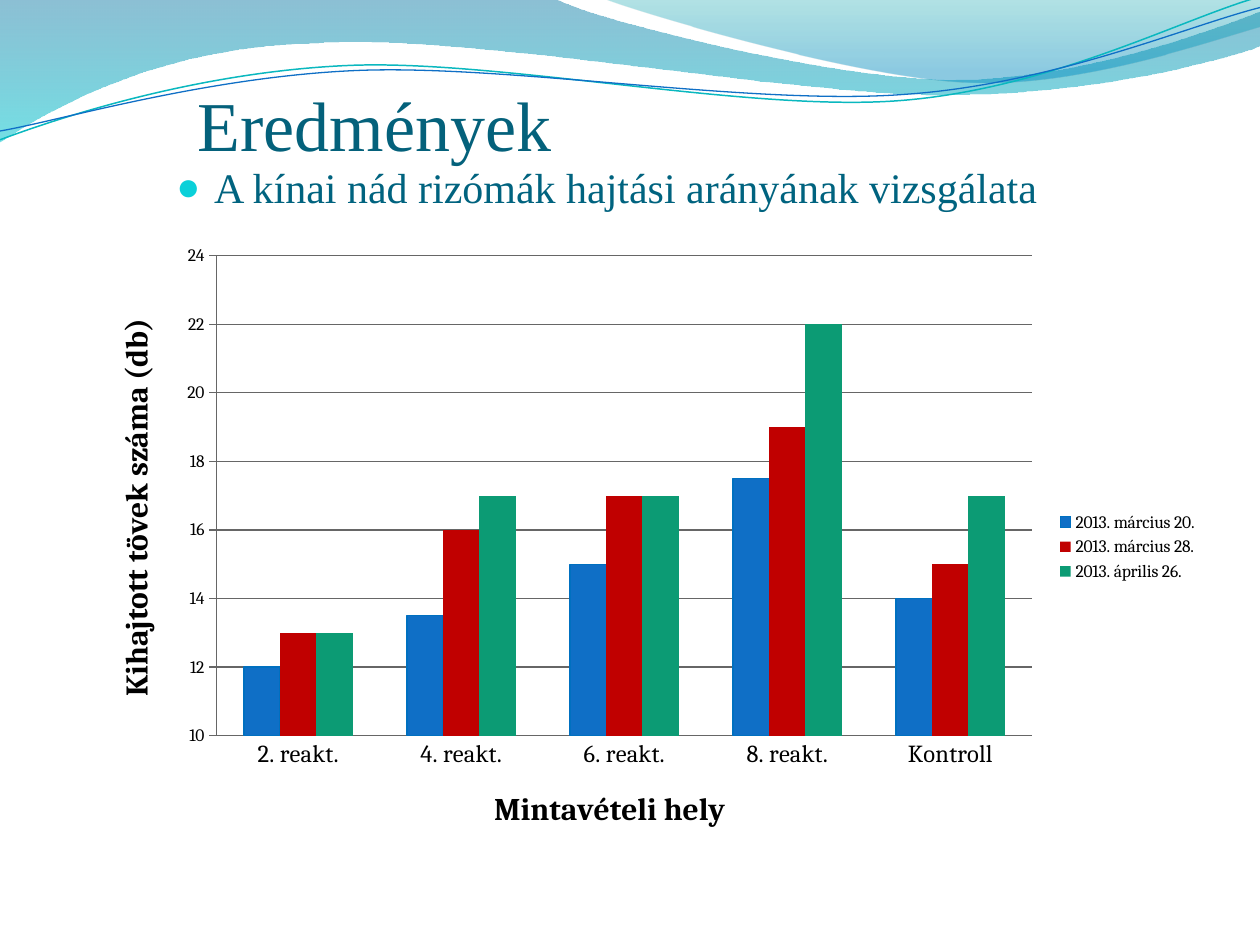
from dataclasses import dataclass
from typing import Optional

from lxml import etree
from pptx import Presentation
from pptx import util as u
from pptx.chart.data import CategoryChartData
from pptx.dml.color import RGBColor
from pptx.enum import chart as ch, text
from pptx.oxml import parse_xml
from pptx.oxml.ns import nsdecls, qn

SERIF = "Times New Roman"
CHART_FONT = "Cambria"
GRID_COLOR = "666666"
CHART_WIDTH, CHART_HEIGHT = 8.86, 4.96


@dataclass
class Stop:
    position: int
    color: str
    opacity: int


@dataclass
class Wave:
    """Outline in inches: a 2-tuple is a line end, a 6-tuple a Bezier curve."""
    start: tuple
    segments: list
    stops: Optional[list] = None
    line_color: Optional[str] = None
    line_width: float = 0


@dataclass
class Series:
    name: str
    values: tuple
    color: str
    line_color: Optional[str] = None


WAVES = [
    Wave((0, 0), [(4.4, -0.01), (4.76, 0.17, 6.64, 0.63, 7.58, 0.63),
                  (8.53, 0.63, 9.58, 0.26, 10, 0.09), (10.01, 0.36),
                  (9.83, 0.44, 8.7, 0.76, 7.46, 0.75),
                  (6.22, 0.75, 3.82, 0.28, 2.57, 0.34),
                  (1.29, 0.36, 0.46, 0.83, -0.01, 1.13)],
         stops=[Stop(0, "0074A1", 45), Stop(100, "00C6CF", 55)]),
    Wave((4.79, -0.01), [(5.09, 0.11, 6.82, 0.62, 7.69, 0.65),
                         (8.56, 0.69, 9.61, 0.32, 10, 0.21), (10, 0)],
         stops=[Stop(0, "00A1A9", 30), Stop(80, "008BBF", 45)]),
    Wave((0, 1.11), [(0.48, 0.93, 1.58, 0.57, 2.77, 0.52),
                     (3.95, 0.47, 5.93, 0.89, 7.13, 0.8),
                     (8.33, 0.71, 9.38, 0.15, 9.98, -0.02)],
         line_color="0AB8BF", line_width=0.85),
    Wave((0, 1.04), [(0.47, 0.96, 1.64, 0.61, 2.83, 0.56),
                     (4.03, 0.51, 5.97, 0.84, 7.17, 0.75),
                     (8.36, 0.67, 9.41, 0.21, 10, 0.06)],
         line_color="0F6FC6", line_width=0.75),
]

CATEGORIES = ["2. reakt.", "4. reakt.", "6. reakt.", "8. reakt.", "Kontroll"]
SERIES = [
    Series("2013. március 20.", (12, 13.5, 15, 17.5, 14), "0F6FC6", "0070C0"),
    Series("2013. március 28.", (13, 16, 17, 19, 15), "C00000"),
    Series("2013. április 26.", (13, 17, 17, 22, 17), "0C9B74"),
]


def rgb(value: str) -> RGBColor:
    return RGBColor.from_string(value)


def style(font, size: float, name: str, color: str, bold: bool = False) -> None:
    font.size, font.name, font.bold = u.Pt(size), name, bold
    font.color.rgb = rgb(color)


def place(box, left: float, top: float, width: float, height: float) -> None:
    box.left, box.top = u.Inches(left), u.Inches(top)
    box.width, box.height = u.Inches(width), u.Inches(height)


def bend(shape, segments: list) -> None:
    """Join the three lines of each curved segment into one Bezier curve."""
    lines = iter(list(shape._element.iter(qn("a:lnTo"))))
    for segment in segments:
        first = next(lines)
        if len(segment) == 6:
            first.tag = qn("a:cubicBezTo")
            for _ in range(2):
                line = next(lines)
                first.append(line[0])
                line.getparent().remove(line)


def draw_wave(page, wave: Wave) -> None:
    points = [(u.Inches(x), u.Inches(y)) for segment in [wave.start, *wave.segments]
              for x, y in zip(segment[::2], segment[1::2])]
    builder = page.shapes.build_freeform(*points[0])
    builder.add_line_segments(points[1:], close=wave.stops is not None)
    shape = builder.convert_to_shape()
    shape.shadow.inherit = False
    bend(shape, wave.segments)
    if wave.stops:
        shape.line.fill.background()
        # Vertical gradient with transparent stops
        stops = "".join(
            f'<a:gs pos="{s.position * 1000}"><a:srgbClr val="{s.color}">'
            f'<a:alpha val="{s.opacity * 1000}"/></a:srgbClr></a:gs>'
            for s in wave.stops)
        gradient = parse_xml(f'<a:gradFill {nsdecls("a")}><a:gsLst>{stops}</a:gsLst>'
                             '<a:lin ang="5400000" scaled="0"/></a:gradFill>')
        shape._element.spPr.find(qn("a:custGeom")).addnext(gradient)
    else:
        shape.fill.background()
        shape.line.color.rgb = rgb(wave.line_color)
        shape.line.width = u.Pt(wave.line_width)


def add_bullet(para, color: str) -> None:
    props = para._p.get_or_add_pPr()
    props.set("marL", str(u.Inches(0.3)))
    props.set("indent", str(u.Inches(-0.3)))
    color_tag = etree.SubElement(props, qn("a:buClr"))
    etree.SubElement(color_tag, qn("a:srgbClr"), val=color)
    etree.SubElement(props, qn("a:buSzPct"), val="95000")
    etree.SubElement(props, qn("a:buFont"), typeface="Arial")
    etree.SubElement(props, qn("a:buChar"), char="●")


def style_axis(axis, title: str, size: float) -> None:
    style(axis.tick_labels.font, size, CHART_FONT, "000000")
    axis.format.line.color.rgb = rgb(GRID_COLOR)
    axis.format.line.width = u.Pt(0.75)
    span = axis.axis_title.text_frame.paragraphs[0].add_run()
    span.text = title
    style(span.font, 18, CHART_FONT, "000000", bold=True)


def fix_plot_area(chart, left: float, top: float, width: float, height: float) -> None:
    """Set the inner plot area in inches from the chart's corner."""
    area = chart._chartSpace.chart.plotArea
    for old in area.findall(qn("c:layout")):
        area.remove(old)
    layout = etree.Element(qn("c:layout"))
    manual = etree.SubElement(layout, qn("c:manualLayout"))
    for tag, value in (("layoutTarget", "inner"), ("xMode", "edge"), ("yMode", "edge"),
                       ("x", left / CHART_WIDTH), ("y", top / CHART_HEIGHT),
                       ("w", width / CHART_WIDTH), ("h", height / CHART_HEIGHT)):
        etree.SubElement(manual, qn(f"c:{tag}"), val=str(value))
    area.insert(0, layout)


def draw_chart(page) -> None:
    data = CategoryChartData()
    data.categories = CATEGORIES
    for item in SERIES:
        data.add_series(item.name, item.values)
    chart = page.shapes.add_chart(
        ch.XL_CHART_TYPE.COLUMN_CLUSTERED, u.Inches(0.75), u.Inches(1.86),
        u.Inches(CHART_WIDTH), u.Inches(CHART_HEIGHT), data).chart
    style(chart.font, 10, CHART_FONT, "000000")
    chart.has_title = False
    chart.has_legend = True
    chart.legend.position = ch.XL_LEGEND_POSITION.RIGHT
    chart.legend.include_in_layout = False
    fix_plot_area(chart, 0.97, 0.17, 6.47, 3.81)

    # Columns
    plot = chart.plots[0]
    plot.vary_by_categories = False
    plot.gap_width, plot.overlap = 150, 0
    for series, item in zip(plot.series, SERIES):
        series.format.fill.solid()
        series.format.fill.fore_color.rgb = rgb(item.color)
        if item.line_color:
            series.format.line.color.rgb = rgb(item.line_color)
            series.format.line.width = u.Pt(0.75)

    # Axes
    style_axis(chart.category_axis, "Mintavételi hely", 14)
    chart.category_axis.major_tick_mark = ch.XL_TICK_MARK.NONE
    values = chart.value_axis
    style_axis(values, "Kihajtott tövek száma (db)", 10)
    values.major_tick_mark = ch.XL_TICK_MARK.CROSS
    values.minimum_scale, values.maximum_scale, values.major_unit = 10, 24, 2
    values.major_gridlines.format.line.color.rgb = rgb(GRID_COLOR)
    values.major_gridlines.format.line.width = u.Pt(0.75)


def write(para, words: str, size: float, color: str) -> None:
    span = para.add_run()
    span.text = words
    style(span.font, size, SERIF, color)


def main() -> None:
    deck = Presentation()
    deck.slide_width, deck.slide_height = u.Inches(10), u.Inches(7.5)
    page = deck.slides.add_slide(deck.slide_layouts[1])
    title, body = page.shapes.title, page.placeholders[1]
    # Waves behind the text
    for wave in WAVES:
        draw_wave(page, wave)
    for box in (title, body):
        page.shapes._spTree.append(box._element)
    # Title
    place(title, 1.57, 0.3, 8.2, 1.01)
    frame = title.text_frame
    frame.vertical_anchor = text.MSO_ANCHOR.BOTTOM
    frame.margin_left = frame.margin_right = frame.margin_bottom = 0
    frame.paragraphs[0].alignment = text.PP_ALIGN.LEFT
    write(frame.paragraphs[0], "Eredmények", 40, "04617B")
    # Bulleted subtitle
    place(body, 1.3, 1.23, 8.47, 5.47)
    para = body.text_frame.paragraphs[0]
    add_bullet(para, "0BD0D9")
    write(para, "A kínai nád rizómák hajtási arányának vizsgálata", 24, "00637F")
    draw_chart(page)
    deck.save("out.pptx")


if __name__ == "__main__":
    main()
